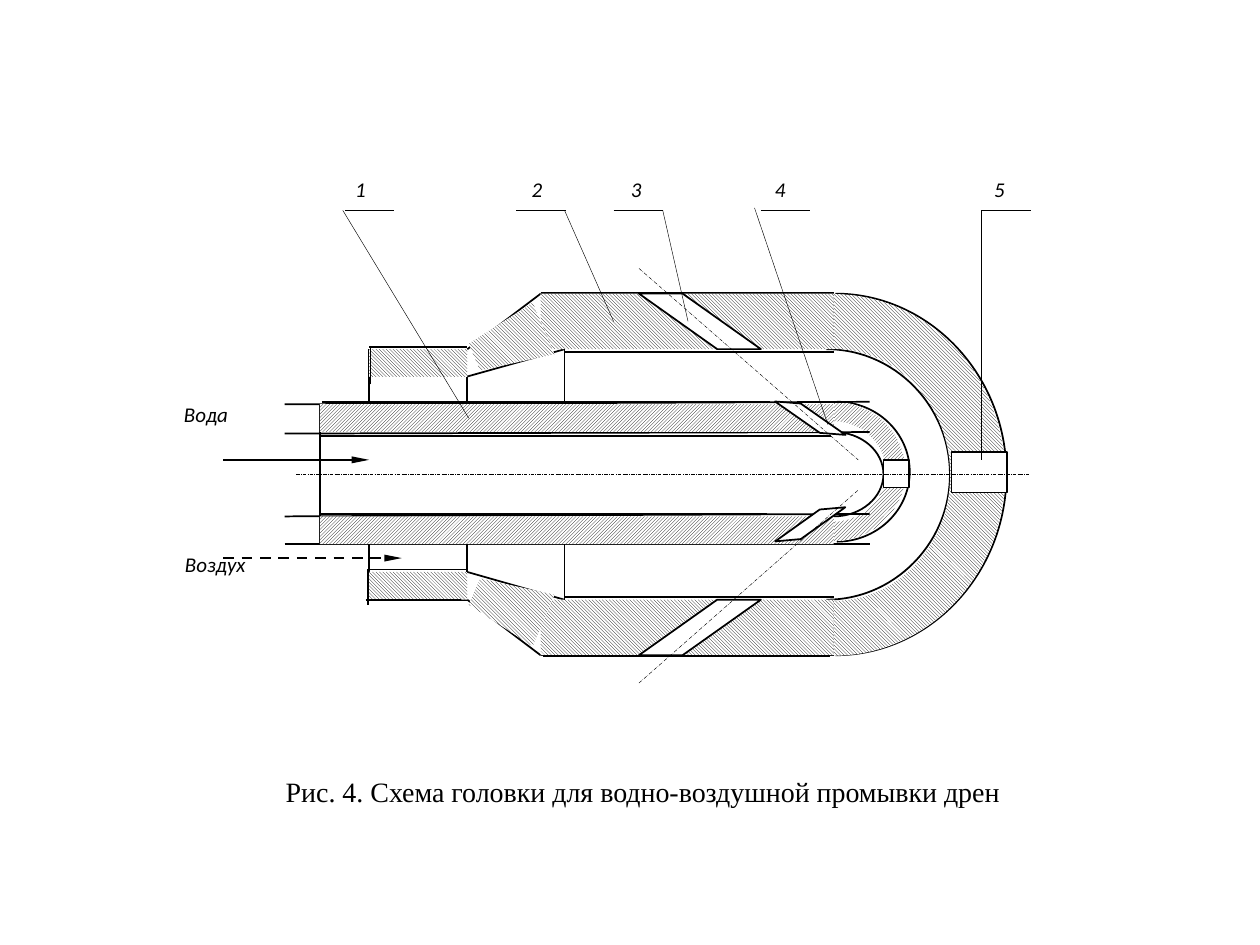
"""Draw the section of a water-air drain flushing head."""
from dataclasses import dataclass

from lxml import etree
from pptx import Presentation, util as u
from pptx.dml.color import RGBColor
from pptx.enum import dml, shapes, text
from pptx.oxml import ns


@dataclass(frozen=True)
class Theme:
    ink: RGBColor = RGBColor(0, 0, 0)
    paper: RGBColor = RGBColor(255, 255, 255)
    head: str = "Times New Roman"
    body: str = "Calibri"
    large: int = 16
    small: int = 12
    fine: float = 0.25
    thin: float = 0.75
    norm: float = 1
    bold: float = 1.5


T = Theme()
SPAN = 7.53
AXIS = SPAN / 2
KIND = shapes.MSO_SHAPE
UP = dml.MSO_PATTERN.LIGHT_UPWARD_DIAGONAL
DOWN = dml.MSO_PATTERN.LIGHT_DOWNWARD_DIAGONAL
CHAIN = dml.MSO_LINE.LONG_DASH_DOT
DASH = dml.MSO_LINE.DASH

PIPE = [(2.26, 3.21, 6.9, 3.19), (2.26, 3.44, 6.9, 3.43),
        (2.26, 4.1, 6.9, 4.08), (2.26, 4.32, 6.9, 4.32),
        (2.54, 3.21, 2.54, 4.32)]
HULL = [(4.48, 2.79, 6.62, 2.79), (3.71, 2.99, 4.48, 2.77),
        (3.71, 2.77, 4.29, 2.33), (2.93, 2.77, 2.93, 3.21)]
SLEEVE = [(2.93, y, 3.71, y) for y in (2.75, 2.99, 4.52, 4.76)]
WALLS = [(3.71, 2.99, 3.71, 3.21), (4.48, 2.77, 4.48, 3.21)]
EDGES = [(4.31, 5.21, 6.59, 5.21), (2.56, 3.19, 6.11, 3.19),
         (2.54, 4.08, 6.09, 4.08), (2.54, 3.46, 6.6, 3.46),
         (2.94, 3.05, 2.94, 2.76), (2.92, 4.52, 2.92, 4.8),
         (2.9, 4.76, 3.66, 4.76)]
WEDGE = [(4.23, 2.4), (3.72, 2.73), (3.81, 2.94), (4.4, 2.81)]
SHELVES = [2.74, 4.1, 4.87, 6.04, 7.79]
LEADS = [(2.72, 1.67, 3.72, 3.32), (4.48, 1.67, 4.87, 2.55),
         (5.26, 1.67, 5.46, 2.55), (5.99, 1.65, 6.57, 3.37),
         (7.79, 1.67, 7.79, 3.65)]
TABS = [1.4, 2.19, 3.33, 5.07]


def size(*vals):
    """Turn drawing inches into centimetre lengths."""
    return [u.Cm(round(v * 2.54, 2)) for v in vals]


def flip(points):
    """Mirror points in the axis of the head."""
    return [(x, SPAN - y) for x, y in points]


def line(tree, ends, width=T.norm, dash=None, arrow=False):
    """Draw a straight line, dashed or with an arrowhead if asked."""
    conn = tree.add_connector(shapes.MSO_CONNECTOR.STRAIGHT, *size(*ends))
    conn.line.color.rgb = T.ink
    conn.line.width = u.Pt(width)
    if dash:
        conn.line.dash_style = dash
    if arrow:
        etree.SubElement(conn.line._get_or_add_ln(), ns.qn("a:tailEnd"),
                         type="triangle", w="sm", len="lg")
    etree.SubElement(conn._element.spPr, ns.qn("a:effectLst"))


def pair(tree, ends):
    """Draw a line and its mirror image."""
    line(tree, ends)
    start, end = flip([ends[:2], ends[2:]])
    line(tree, start + end)


def hatch(shape, kind):
    """Fill a shape with hatching and no outline."""
    shape.shadow.inherit = False
    shape.fill.patterned()
    shape.fill.pattern = kind
    shape.fill.fore_color.rgb = T.ink
    shape.fill.back_color.rgb = T.paper
    shape.line.fill.background()


def block(tree, box, kind):
    """Draw a hatched rectangle."""
    hatch(tree.add_shape(KIND.RECTANGLE, *size(*box)), kind)


def trace(tree, points, close):
    """Build an outline through the points."""
    first, *rest = [size(*p) for p in points]
    form = tree.build_freeform(*first, scale=1.0)
    form.add_line_segments(rest, close=close)
    return form.convert_to_shape()


def arc(tree, left, top, wide, high):
    """Draw the right half of an ellipse as two curves."""
    points = [(left, top), (left + wide, top + high / 2), (left, top + high)]
    shape = trace(tree, points, False)
    w, h = shape.width, shape.height
    bends = [[(0.55 * w, 0), (w, 0.225 * h), (w, h / 2)],
             [(w, 0.775 * h), (0.55 * w, h), (0, h)]]
    for leg, bend in zip(list(shape._element.iter(ns.qn("a:lnTo"))), bends):
        leg.clear()
        for x, y in bend:
            etree.SubElement(leg, ns.qn("a:pt"), x=str(int(x)), y=str(int(y)))
        curve = etree.Element(ns.qn("a:cubicBezTo"))
        curve.extend(list(leg))
        leg.getparent().replace(leg, curve)
    shape.shadow.inherit = False
    shape.fill.background()
    shape.line.color.rgb = T.ink
    shape.line.width = u.Pt(T.norm)


def ring(tree, box, thick, kind):
    """Draw a hatched half ring that bulges to the right."""
    shape = tree.add_shape(KIND.BLOCK_ARC, *size(*box))
    shape.adjustments[2] = thick
    shape.rotation = 90
    hatch(shape, kind)


def port(tree, box, slant=None, turn=0, over=False):
    """Draw a white opening, slanted if asked."""
    shape = tree.add_shape(KIND.PARALLELOGRAM if slant else KIND.RECTANGLE,
                           *size(*box))
    if slant:
        shape.adjustments[0] = slant
    shape.rotation = turn
    if over:
        shape._element.spPr.xfrm.set("flipV", "1")
    shape.shadow.inherit = False
    shape.fill.solid()
    shape.fill.fore_color.rgb = T.paper
    shape.line.color.rgb = T.ink
    shape.line.width = u.Pt(T.norm)


def style(para, name, points, slope=False):
    """Format the runs of a paragraph."""
    for run in para.runs:
        font = run.font
        font.name, font.size, font.italic = name, u.Pt(points), slope
        font.color.rgb = T.ink


def label(tree, box, words, tabs=()):
    """Write an italic label, spread over tab stops if given."""
    frame = tree.add_textbox(*size(*box)).text_frame
    frame.word_wrap = True
    frame.margin_left = frame.margin_right = u.Cm(0.2)
    frame.margin_top = frame.margin_bottom = u.Cm(0.1)
    para = frame.paragraphs[0]
    para.text = words
    para.line_spacing = 1.15
    para.space_after = u.Pt(10)
    style(para, T.body, T.small, True)
    if tabs:
        stops = etree.SubElement(para._p.get_or_add_pPr(), ns.qn("a:tabLst"))
        for pos in size(*tabs):
            etree.SubElement(stops, ns.qn("a:tab"), pos=str(pos), algn="l")


def title(slide, words):
    """Place and format the caption."""
    shape = slide.shapes.title
    shape.left, shape.top, shape.width, shape.height = size(
        1.03, 5.88, 8.14, 0.79)
    frame = shape.text_frame
    frame.text = words
    frame.vertical_anchor = text.MSO_ANCHOR.MIDDLE
    frame.paragraphs[0].alignment = text.PP_ALIGN.CENTER
    style(frame.paragraphs[0], T.head, T.large)


def body(tree):
    """Draw the pipe and the hull with their hatching."""
    arc(tree, 6.62, 3.43, 0.39, 0.67)
    arc(tree, 6.64, 3.19, 0.58, 1.11)
    ring(tree, (6.05, 3.16, 1.11, 1.16), 0.14, UP)
    for ends in PIPE:
        line(tree, ends)
    for top in (3.21, 4.1):
        block(tree, (2.54, top, 4.08, 0.22), UP)
    arc(tree, 6.56, 2.77, 0.98, 1.99)
    arc(tree, 6.63, 2.33, 1.36, 2.87)
    for ends in HULL:
        pair(tree, ends)
    for ends in SLEEVE:
        line(tree, ends)
    line(tree, (4.29, 2.33, 6.62, 2.33), T.bold)
    line(tree, (4.29, 5.2, 6.62, 5.2))
    for top in (2.33, 4.76):
        block(tree, (4.29, top, 2.33, 0.44), DOWN)
    ring(tree, (5.18, 2.41, 2.87, 2.72), 0.16, DOWN)
    for top in (2.77, 4.54):
        block(tree, (2.93, top, 0.78, 0.22), DOWN)
    for points in (WEDGE, flip(WEDGE)):
        hatch(trace(tree, points, True), DOWN)


def ports(tree):
    """Draw the nozzles and the axes through them."""
    port(tree, (7.01, 3.65, 0.2, 0.22))
    port(tree, (7.55, 3.59, 0.44, 0.32))
    port(tree, (5.07, 4.76, 0.97, 0.44), 1.41)
    port(tree, (5.07, 2.33, 0.97, 0.44), 1.41, over=True)
    port(tree, (6.14, 4.05, 0.58, 0.22), 1.7, -5.1)
    port(tree, (6.14, 3.21, 0.58, 0.22), 1.7, 4.5, True)
    for ends in ((5.07, 2.13, 6.81, 3.65), (5.07, 5.42, 6.81, 3.89),
                 (2.35, AXIS, 8.17, AXIS)):
        line(tree, ends, T.fine, CHAIN)


def notes(tree):
    """Draw the numbered leaders, the flows and their labels."""
    for left in SHELVES:
        line(tree, (left, 1.67, left + 0.39, 1.67), T.thin)
    for ends in LEADS:
        line(tree, ends, T.fine)
    line(tree, (1.77, 3.65, 2.93, 3.65), arrow=True)
    line(tree, (1.77, 4.43, 3.19, 4.43), T.bold, DASH, True)
    label(tree, (1.38, 3.12, 1.17, 0.66), "Вода")
    label(tree, (1.39, 4.31, 1.36, 0.67), "Воздух")
    label(tree, (2.74, 1.33, 5.63, 0.66), "1\t2\t3\t4\t5", TABS)


def main():
    """Build and save the slide."""
    deck = Presentation()
    deck.slide_width, deck.slide_height = u.Cm(25.4), u.Cm(19.05)
    slide = deck.slides.add_slide(deck.slide_layouts[5])
    title(slide, "Рис. 4. Схема головки для водно-воздушной промывки дрен")
    tree = slide.shapes
    body(tree)
    ports(tree)
    for ends in WALLS:
        pair(tree, ends)
    notes(tree)
    for ends in EDGES:
        line(tree, ends)
    deck.save("out.pptx")


if __name__ == "__main__":
    main()
